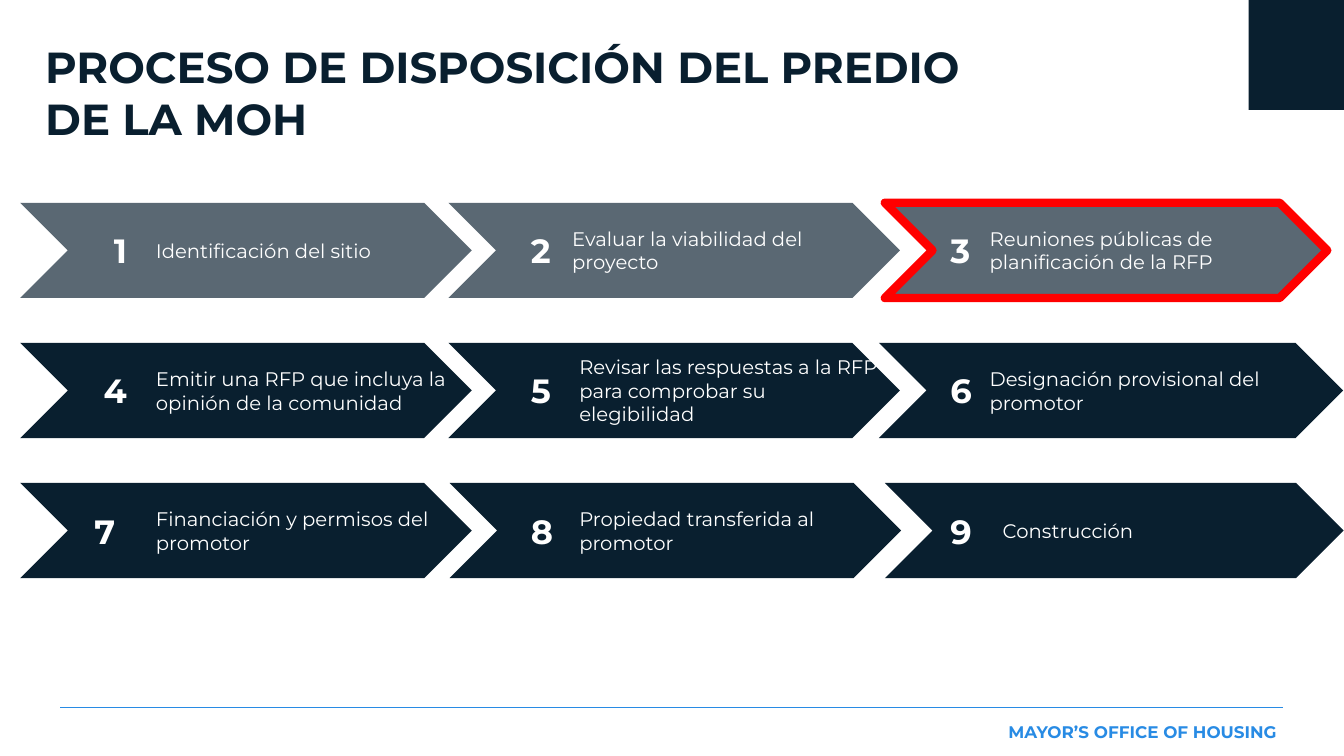
from pptx import Presentation
from pptx.dml.color import RGBColor
from pptx.enum.shapes import MSO_CONNECTOR, MSO_SHAPE
from pptx.enum.text import MSO_ANCHOR, PP_ALIGN
from pptx.oxml.ns import qn
from pptx.util import Cm, Pt
from lxml import etree

CHEVRON, RECTANGLE = MSO_SHAPE.CHEVRON, MSO_SHAPE.RECTANGLE
STRAIGHT = MSO_CONNECTOR.STRAIGHT
TOP, MIDDLE = MSO_ANCHOR.TOP, MSO_ANCHOR.MIDDLE
LEFT, RIGHT = PP_ALIGN.LEFT, PP_ALIGN.RIGHT

NAVY, WHITE, BLUE, RED = "091F2F", "FFFFFF", "288BE4", "FF0000"
ROW_TOP, ROW_STEP, CHEVRON_H = 5.11, 3.53, 2.4
LABEL_INSET, LABEL_H, NUMBER_W = 0.25, 1.9, 2.16
STEPS_PER_ROW, CURRENT_STEP = 3, 3

# chevron left, chevron width, number left, label left, label width, label
STEPS = [
    (0.51, 11.38, 2.62, 3.68, 6.05, "Identificación del sitio"),
    (11.3, 11.38, 13.13, 14.17, 8.53, "Evaluar la viabilidad del proyecto"),
    (22.3, 11.15, 23.7, 24.69, 6.6, "Reuniones públicas de planificación de la RFP"),
    (0.51, 11.38, 2.36, 3.68, 8.18, "Emitir una RFP que incluya la opinión de la comunidad"),
    (11.3, 11.38, 13.13, 14.35, 8.18,
     "Revisar las respuestas a la RFP para comprobar su elegibilidad"),
    (22.15, 11.7, 23.7, 24.69, 7.67, "Designación provisional del promotor"),
    (0.51, 11.38, 2.13, 3.68, 7.59, "Financiación y permisos del promotor"),
    (11.33, 11.38, 13.13, 14.35, 7.06, "Propiedad transferida al promotor"),
    (22.3, 11.56, 23.7, 25.02, 5.26, "Construcción"),
]


def rgb(hex_color):
    return RGBColor.from_string(hex_color)


class SlideBuilder:
    """Holds the font and the current slide, and draws elements in cm."""

    def __init__(self, s, font):
        self.s = s
        self.font = font

    def shape(self, kind, x, y, w, h, fill, alpha=None, line=None, line_pt=1):
        sp = self.s.shapes.add_shape(kind, Cm(x), Cm(y), Cm(w), Cm(h))
        sp.shadow.inherit = False
        sp.fill.solid()
        sp.fill.fore_color.rgb = rgb(fill)
        if alpha is not None:
            color = sp._element.spPr.find(qn("a:solidFill"))[0]
            etree.SubElement(color, qn("a:alpha")).set("val", str(alpha * 1000))
        if line:
            sp.line.color.rgb = rgb(line)
            sp.line.width = Pt(line_pt)
        else:
            sp.line.fill.background()

    def text(self, x, y, w, h, text, size, color, bold=False,
             align=LEFT, anchor=MIDDLE, inset=0.25):
        tf = self.s.shapes.add_textbox(Cm(x), Cm(y), Cm(w), Cm(h)).text_frame
        tf.word_wrap = True
        tf.vertical_anchor = anchor
        tf.margin_left = tf.margin_right = Cm(inset)
        tf.margin_top = tf.margin_bottom = Cm(inset)
        p = tf.paragraphs[0]
        p.text = text
        p.alignment = align
        p.font.name = self.font
        p.font.size = Pt(size)
        p.font.bold = bold
        p.font.color.rgb = rgb(color)

    def line(self, x1, y1, x2, y2, color, width):
        c = self.s.shapes.add_connector(STRAIGHT, Cm(x1), Cm(y1), Cm(x2), Cm(y2))
        c.line.color.rgb = rgb(color)
        c.line.width = Pt(width)
        etree.SubElement(c._element.spPr, qn("a:effectLst"))

    def step(self, number, x, w, number_x, label_x, label_w, label):
        """Draw one numbered chevron; steps up to the current one are faded."""
        y = ROW_TOP + (number - 1) // STEPS_PER_ROW * ROW_STEP
        self.shape(CHEVRON, x, y, w, CHEVRON_H, NAVY,
                   alpha=67 if number <= CURRENT_STEP else None,
                   line=RED if number == CURRENT_STEP else None, line_pt=6)
        y += LABEL_INSET
        self.text(label_x, y, label_w, LABEL_H, label, 14, WHITE)
        self.text(number_x, y, NUMBER_W, LABEL_H, str(number), 24, WHITE, bold=True)


def main():
    prs = Presentation()
    prs.slide_width, prs.slide_height = Cm(33.87), Cm(19.05)
    slide = SlideBuilder(prs.slides.add_slide(prs.slide_layouts[6]), "Montserrat")

    slide.text(23.11, 17.83, 9.32, 1.22, "MAYOR’S OFFICE OF HOUSING", 12, BLUE,
               bold=True, align=RIGHT)
    slide.line(1.52, 17.83, 32.33, 17.83, BLUE, 0.75)
    slide.shape(RECTANGLE, 31.47, 0, 2.4, 2.77, NAVY)
    slide.text(0.81, 0.69, 28.78, 2.79,
               "PROCESO DE DISPOSICIÓN DEL PREDIO\vDE LA MOH", 31, NAVY,
               bold=True, anchor=TOP, inset=0.33)
    for number, step in enumerate(STEPS, 1):
        slide.step(number, *step)

    prs.save("out.pptx")


if __name__ == "__main__":
    main()
